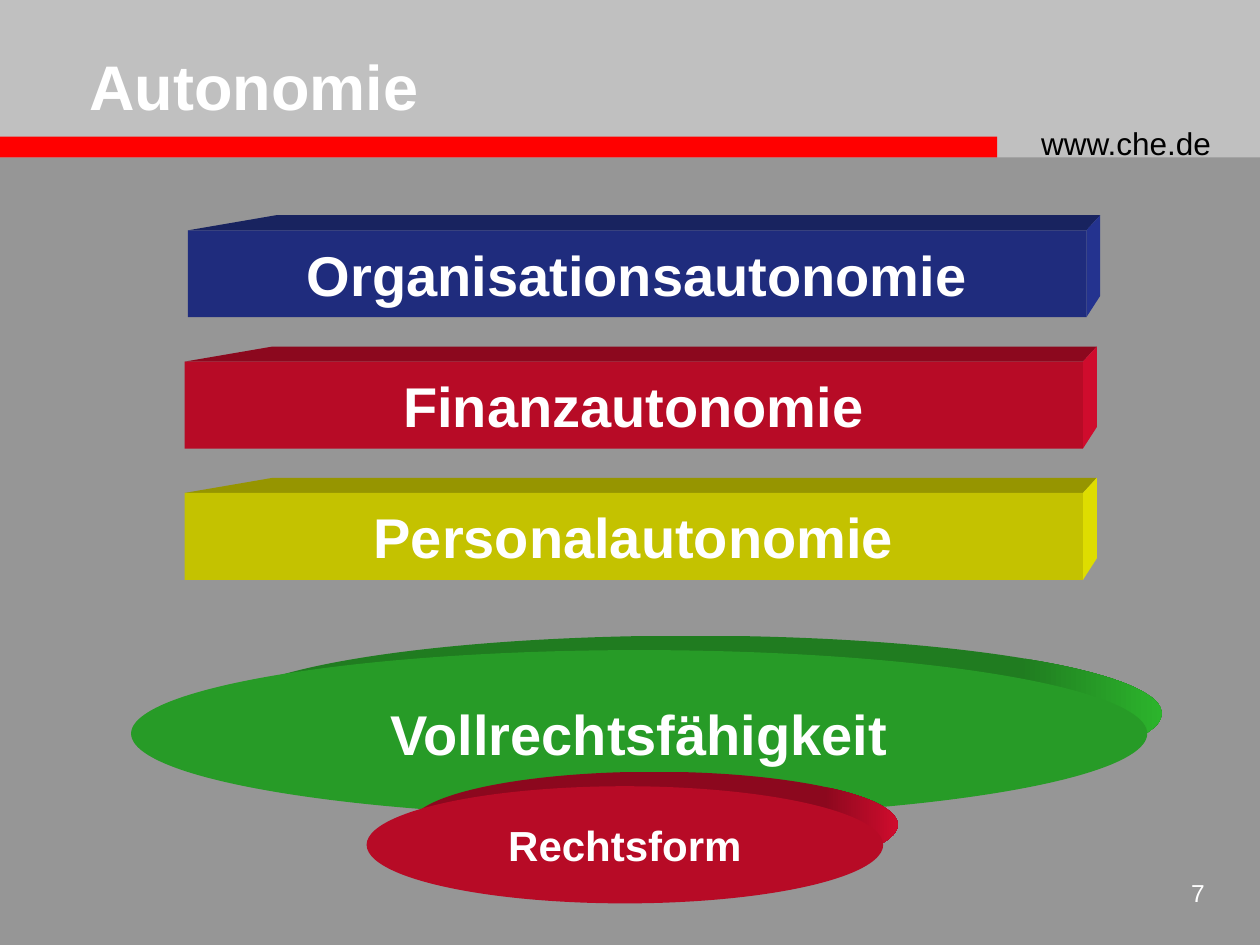
import pptx
import pptx.util
import pptx.dml.color
import pptx.enum.shapes
import pptx.enum.text

RGB = pptx.dml.color.RGBColor
KIND = pptx.enum.shapes.MSO_SHAPE
ALIGN = pptx.enum.text.PP_ALIGN
ANCHOR = pptx.enum.text.MSO_ANCHOR

BACK = RGB(0x96, 0x96, 0x96)
SILVER = RGB(0xC0, 0xC0, 0xC0)
SIGNAL = RGB(0xFF, 0x00, 0x00)
WHITE = RGB(0xFF, 0xFF, 0xFF)
BLACK = RGB(0x00, 0x00, 0x00)
BLUE = (RGB(0x1F, 0x2C, 0x7D), RGB(0x18, 0x23, 0x5F), RGB(0x24, 0x33, 0x8F))
RED = (RGB(0xB7, 0x0B, 0x26), RGB(0x8C, 0x08, 0x1E), RGB(0xCF, 0x0C, 0x2D))
GOLD = (RGB(0xC4, 0xC2, 0x00), RGB(0x96, 0x95, 0x00), RGB(0xDE, 0xDD, 0x00))
GREEN = (RGB(0x27, 0x9B, 0x27), RGB(0x20, 0x7C, 0x20), RGB(0x2C, 0xB4, 0x2C))

COLS, ROWS = 100, 75
WIDTH, HEIGHT = pptx.util.Inches(10), pptx.util.Inches(7.5)


def place(col, row):
    return round(col * WIDTH / COLS), round(row * HEIGHT / ROWS)


def plain(shape, color):
    shape.shadow.inherit = False
    shape.fill.solid()
    shape.fill.fore_color.rgb = color
    shape.line.fill.background()


def solid(slide, kind, area, color):
    shape = slide.shapes.add_shape(kind, *place(*area[:2]), *place(*area[2:]))
    plain(shape, color)
    return shape


def face(slide, points, color):
    spots = [place(*point) for point in points]
    maker = slide.shapes.build_freeform(*spots[0], scale=1.0)
    maker.add_line_segments(spots[1:], close=True)
    plain(maker.convert_to_shape(), color)


def write(shape, text, size, color, bold=False, align=ALIGN.LEFT):
    shape.text_frame.text = text
    para = shape.text_frame.paragraphs[0]
    para.alignment = align
    para.font.name = "Arial"
    para.font.size = pptx.util.Pt(size)
    para.font.bold = bold
    para.font.color.rgb = color


def label(shape, text, size):
    write(shape, text, size, WHITE, True, ALIGN.CENTER)
    shape.text_frame.vertical_anchor = ANCHOR.MIDDLE
    shape.text_frame.word_wrap = False


def note(slide, area, text, size, color, align=ALIGN.LEFT):
    box = slide.shapes.add_textbox(*place(*area[:2]), *place(*area[2:]))
    box.text_frame.word_wrap = True
    write(box, text, size, color, align=align)


def slab(slide, left, top, text, tones):
    wide, high = 71.3, 6.9
    right, low = left + wide, top + high
    rear, peak = right + 1.1, top - 1.2
    front, roof, side = tones
    face(slide, [(left, top), (left + 7, peak), (rear, peak), (right, top)], roof)
    face(slide, [(right, top), (rear, peak), (rear, low - 1.7), (right, low)], side)
    label(solid(slide, KIND.RECTANGLE, (left, top, wide, high), front), text, 32)


def disc(slide, area, inset, text, size, tones):
    left, top, wide, high = area
    front, rim, edge = tones
    rear = (left + inset, top - 1.15, wide - inset + 1.15, high - 0.9)
    shape = solid(slide, KIND.OVAL, rear, rim)
    shape.fill.gradient()
    shape.fill.gradient_angle = 0
    for stop, color, spot in zip(shape.fill.gradient_stops, (rim, edge), (0.85, 1)):
        stop.color.rgb = color
        stop.position = spot
    label(solid(slide, KIND.OVAL, area, front), text, size)


def head(slide):
    solid(slide, KIND.RECTANGLE, (0, 0, COLS, 12.5), SILVER)
    solid(slide, KIND.RECTANGLE, (0, 10.85, 79.15, 1.65), SIGNAL)
    note(slide, (81.65, 9.35, 17.5, 4), "www.che.de", 18, BLACK)
    title = slide.shapes.title
    title.element.getparent().append(title.element)
    title.left, title.top = place(6.1, 3)
    title.width, title.height = place(72.9, 7.5)
    write(title, "Autonomie", 36, WHITE, True)
    title.text_frame.vertical_anchor = ANCHOR.MIDDLE


def main():
    deck = pptx.Presentation()
    deck.slide_width, deck.slide_height = WIDTH, HEIGHT
    slide = deck.slides.add_slide(deck.slide_layouts[5])
    slide.background.fill.solid()
    slide.background.fill.fore_color.rgb = BACK
    head(slide)
    slabs = [
        (14.92, "Organisationsautonomie", BLUE),
        (14.65, "Finanzautonomie", RED),
        (14.65, "Personalautonomie", GOLD),
    ]
    for index, (left, text, tones) in enumerate(slabs):
        slab(slide, left, 18.28 + index * 10.42, text, tones)
    disc(slide, (10.4, 51.6, 80.65, 13.25), 7, "Vollrechtsfähigkeit", 32, GREEN)
    disc(slide, (29.1, 62.4, 41, 9.3), 3.5, "Rechtsform", 24, RED)
    note(slide, (90.8, 69.2, 5.8, 4.2), "7", 14, WHITE, ALIGN.RIGHT)
    deck.save("out.pptx")


if __name__ == "__main__":
    main()
